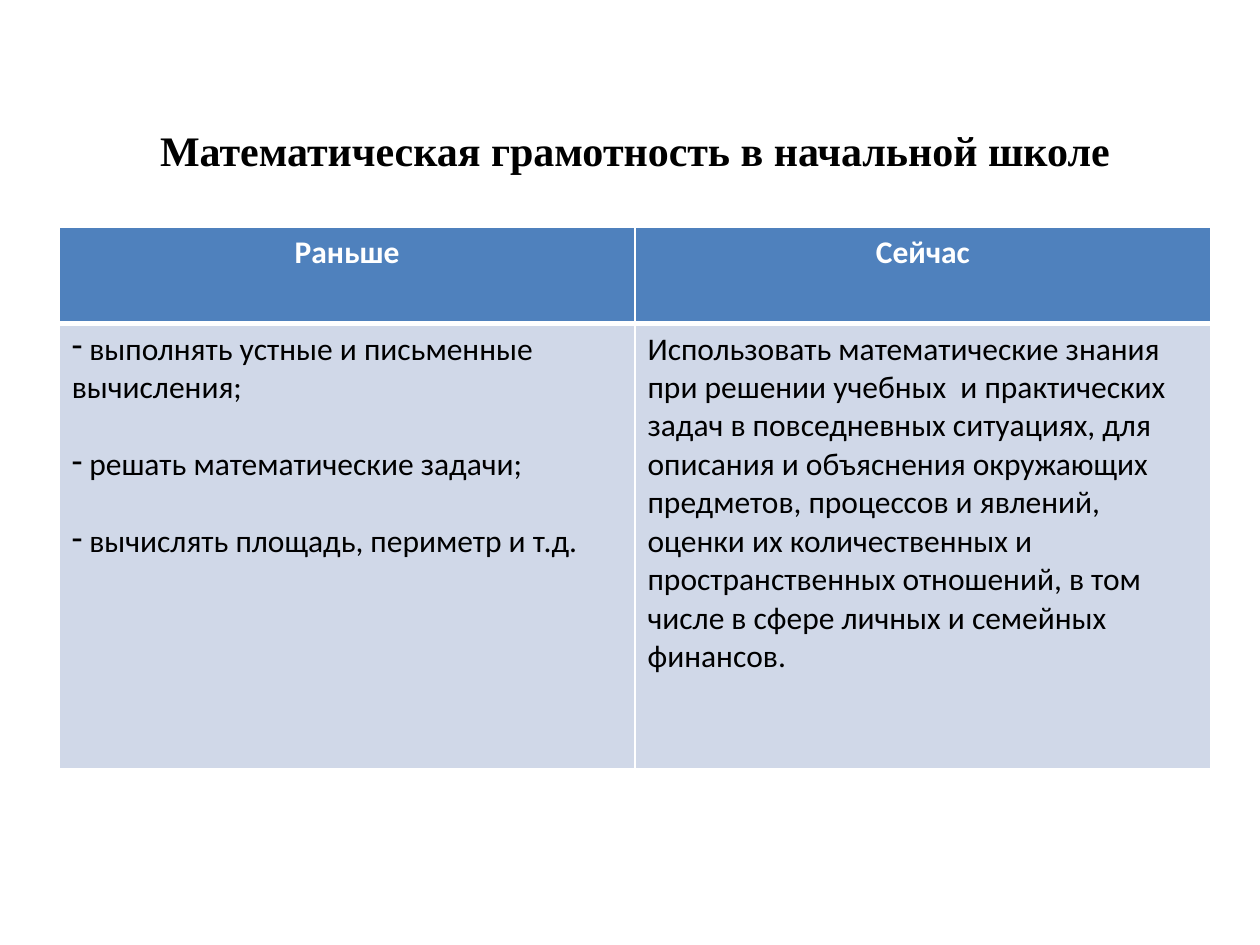
"""Build a slide comparing mathematical literacy in primary school then and now."""
from lxml.etree import SubElement
from pptx import Presentation
from pptx.dml.color import RGBColor
from pptx.enum.text import MSO_ANCHOR, PP_ALIGN
from pptx.oxml.ns import qn
from pptx.util import Inches, Pt

COLORS = {"header": "4F81BD", "body": "D0D8E8", "white": "FFFFFF", "black": "000000"}
COLUMNS = {
    "Раньше": [
        " выполнять устные и письменные вычисления;",
        " решать математические задачи;",
        " вычислять площадь, периметр и т.д.",
    ],
    "Сейчас": [
        "Использовать математические знания при решении учебных  и практических "
        "задач в повседневных ситуациях, для описания и объяснения окружающих "
        "предметов, процессов и явлений, оценки их количественных и "
        "пространственных отношений, в том числе в сфере личных и семейных финансов."
    ],
}
LEFT, TOP, COLUMN_WIDTH = 0.47, 1.8, 4.57
ROW_HEIGHTS = [0.77, 3.53]


def style_text(paragraph, font_name, size, color, bold):
    for run in paragraph.runs:
        run.font.name = font_name
        run.font.size = Pt(size)
        run.font.bold = bold
        run.font.color.rgb = RGBColor.from_string(COLORS[color])


def style_cell(cell, fill, edge_widths):
    properties = cell._tc.get_or_add_tcPr()
    for edge, width in edge_widths.items():
        line = SubElement(properties, qn(f"a:ln{edge}"), w=str(Pt(width)))
        SubElement(SubElement(line, qn("a:solidFill")), qn("a:srgbClr"), val=COLORS["white"])
    cell.fill.solid()
    cell.fill.fore_color.rgb = RGBColor.from_string(COLORS[fill])


presentation = Presentation()
presentation.slide_width, presentation.slide_height = Inches(10), Inches(7.5)
slide = presentation.slides.add_slide(presentation.slide_layouts[5])

title = slide.shapes.title
title.left, title.top = Inches(1.17), Inches(0.94)
title.width, title.height = Inches(8.13), Inches(0.5)
title.text_frame.text = "Математическая грамотность в начальной школе"
title.text_frame.vertical_anchor = MSO_ANCHOR.TOP
title.text_frame.paragraphs[0].alignment = PP_ALIGN.LEFT
style_text(title.text_frame.paragraphs[0], "Times New Roman", 24, "black", True)

table = slide.shapes.add_table(
    len(ROW_HEIGHTS), len(COLUMNS), Inches(LEFT), Inches(TOP),
    Inches(COLUMN_WIDTH * len(COLUMNS)), Inches(sum(ROW_HEIGHTS)),
).table
for row, height in zip(table.rows, ROW_HEIGHTS):
    row.height = Inches(height)

for index, (heading, items) in enumerate(COLUMNS.items()):
    table.columns[index].width = Inches(COLUMN_WIDTH)

    header = table.cell(0, index)
    header.text_frame.text = heading
    header.text_frame.paragraphs[0].alignment = PP_ALIGN.CENTER
    style_text(header.text_frame.paragraphs[0], "Calibri", 18, "white", True)
    style_cell(header, "header", {"L": 1, "R": 1, "T": 1, "B": 3})

    body = table.cell(1, index)
    body.text_frame.text = "\n".join(items)
    for number, paragraph in enumerate(body.text_frame.paragraphs):
        style_text(paragraph, "Calibri", 18, "black", False)
        if number:
            paragraph.space_before = Pt(22)
        if len(items) > 1:
            paragraph_properties = paragraph._p.get_or_add_pPr()
            paragraph_properties.set("marL", "0")
            paragraph_properties.set("indent", "0")
            SubElement(paragraph_properties, qn("a:buChar"), char="-")
    style_cell(body, "body", {"L": 1, "R": 1, "T": 3, "B": 1})

presentation.save("out.pptx")
